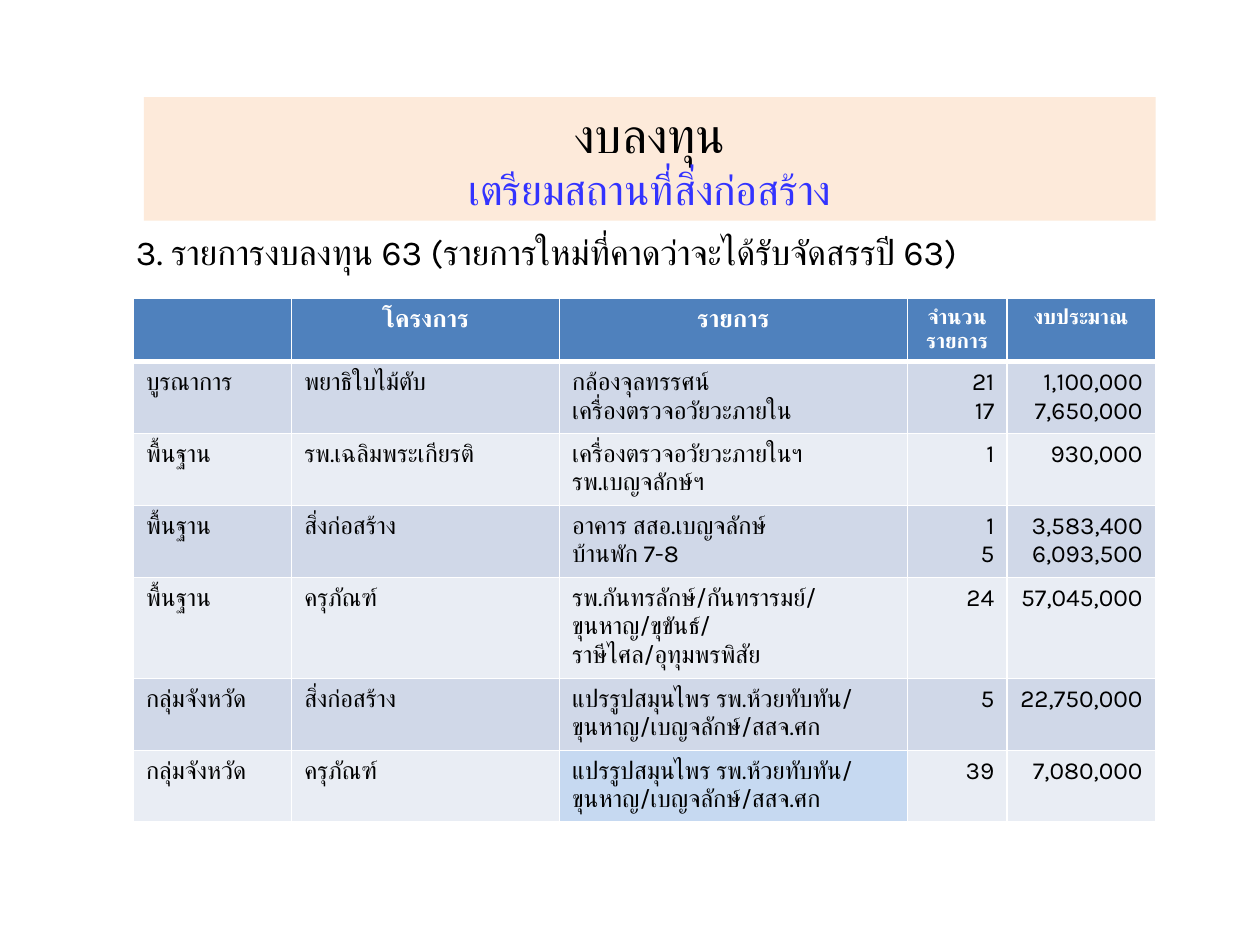
import pptx
import pptx.dml.color
import pptx.enum.shapes
import pptx.enum.text
import pptx.oxml
import pptx.oxml.ns
import pptx.util

Cm = pptx.util.Cm
Pt = pptx.util.Pt
ALIGN = pptx.enum.text.PP_ALIGN
COLORS = {
    "black": "000000", "white": "FFFFFF", "blue": "3333FF", "peach": "FDEADA",
    "header": "4F81BD", "odd": "D0D8E8", "even": "E9EDF4", "highlight": "C6D9F1",
}


def rgb(name):
    return pptx.dml.color.RGBColor.from_string(COLORS[name])


def write_line(paragraph, text, size, color="black", align=ALIGN.LEFT, bold=False):
    paragraph.alignment = align
    run = paragraph.add_run()
    run.text = text
    formats = {"name": "Karla", "size": Pt(size), "bold": bold}
    for attribute, value in formats.items():
        setattr(run.font, attribute, value)
    run.font.color.rgb = rgb(color)
    # Thai letters take the complex-script font
    complex_font = pptx.oxml.parse_xml(
        f'<a:cs {pptx.oxml.ns.nsdecls("a")} typeface="Karla"/>')
    run.font._element.append(complex_font)


presentation = pptx.Presentation()
presentation.slide_width = Cm(25.4)
presentation.slide_height = Cm(19.05)
slide = presentation.slides.add_slide(presentation.slide_layouts[6])

# Subtitle
subtitle = slide.shapes.add_textbox(Cm(2.49), Cm(4.52), Cm(20.8), Cm(1.11))
subtitle.text_frame.word_wrap = True
write_line(subtitle.text_frame.paragraphs[0],
           "3. รายการงบลงทุน 63 (รายการใหม่ที่คาดว่าจะได้รับจัดสรรปี 63)", 20)

# Budget table
headers = [("", 14), ("โครงการ", 14), ("รายการ", 14), ("จำนวนรายการ", 12), ("งบประมาณ", 12)]
herbal_items = "แปรรูปสมุนไพร รพ.ห้วยทับทัน/\nขุนหาญ/เบญจลักษ์/สสจ.ศก"
budget_rows = [
    ("บูรณาการ", "พยาธิใบไม้ตับ", "กล้องจุลทรรศน์\nเครื่องตรวจอวัยวะภายใน",
     "21\n17", "1,100,000\n7,650,000"),
    ("พื้นฐาน", "รพ.เฉลิมพระเกียรติ", "เครื่องตรวจอวัยวะภายในฯ\nรพ.เบญจลักษ์ฯ",
     "1", "930,000"),
    ("พื้นฐาน", "สิ่งก่อสร้าง", "อาคาร สสอ.เบญจลักษ์\nบ้านพัก 7-8",
     "1\n5", "3,583,400\n6,093,500"),
    ("พื้นฐาน", "ครุภัณฑ์",
     "รพ.กันทรลักษ์/กันทรารมย์/\nขุนหาญ/ขุขันธ์/\nราษีไศล/อุทุมพรพิสัย",
     "24", "57,045,000"),
    ("กลุ่มจังหวัด", "สิ่งก่อสร้าง", herbal_items, "5", "22,750,000"),
    ("กลุ่มจังหวัด", "ครุภัณฑ์", herbal_items, "39", "7,080,000"),
]
column_widths = [3.19, 5.4, 7.01, 2.01, 2.99]
row_heights = [1.22, 1.45, 1.45, 1.45, 2.03, 1.45, 1.45]
table = slide.shapes.add_table(
    len(row_heights), len(column_widths), Cm(2.69), Cm(6.02),
    Cm(sum(column_widths)), Cm(sum(row_heights))).table
for column, width in zip(table.columns, column_widths):
    column.width = Cm(width)
for row, height in zip(table.rows, row_heights):
    row.height = Cm(height)

for column_index, (text, size) in enumerate(headers):
    if text:
        write_line(table.cell(0, column_index).text_frame.paragraphs[0],
                   text, size, "white", ALIGN.CENTER, True)

for row_index, values in enumerate(budget_rows, start=1):
    for column_index, value in enumerate(values):
        text_frame = table.cell(row_index, column_index).text_frame
        align = ALIGN.RIGHT if column_index >= 3 else ALIGN.LEFT
        for line_index, line in enumerate(value.split("\n")):
            paragraph = text_frame.add_paragraph() if line_index else text_frame.paragraphs[0]
            write_line(paragraph, line, 14, align=align)

# Cell borders and fills
for row_index, row in enumerate(table.rows):
    fill_name = "header" if row_index == 0 else ("odd" if row_index % 2 else "even")
    for cell in row.cells:
        properties = cell._tc.get_or_add_tcPr()
        for side in ("L", "R", "T", "B"):
            under_header = (row_index, side) in ((0, "B"), (1, "T"))
            width = Pt(3 if under_header else 1)
            properties.append(pptx.oxml.parse_xml(
                f'<a:ln{side} {pptx.oxml.ns.nsdecls("a")} w="{width}"><a:solidFill>'
                f'<a:srgbClr val="{COLORS["white"]}"/></a:solidFill></a:ln{side}>'))
        cell.fill.solid()
        cell.fill.fore_color.rgb = rgb(fill_name)
table.cell(6, 2).fill.fore_color.rgb = rgb("highlight")

# Title banner
banner = slide.shapes.add_shape(
    pptx.enum.shapes.MSO_SHAPE.RECTANGLE, Cm(2.9), Cm(1.96), Cm(20.4), Cm(2.49))
banner.shadow.inherit = False
banner.fill.solid()
banner.fill.fore_color.rgb = rgb("peach")
banner.line.fill.background()
banner_frame = banner.text_frame
banner_frame.vertical_anchor = pptx.enum.text.MSO_ANCHOR.MIDDLE
write_line(banner_frame.paragraphs[0], "งบลงทุน", 28, align=ALIGN.CENTER)
write_line(banner_frame.add_paragraph(), "เตรียมสถานที่สิ่งก่อสร้าง", 24, "blue", ALIGN.CENTER)

presentation.save("out.pptx")
